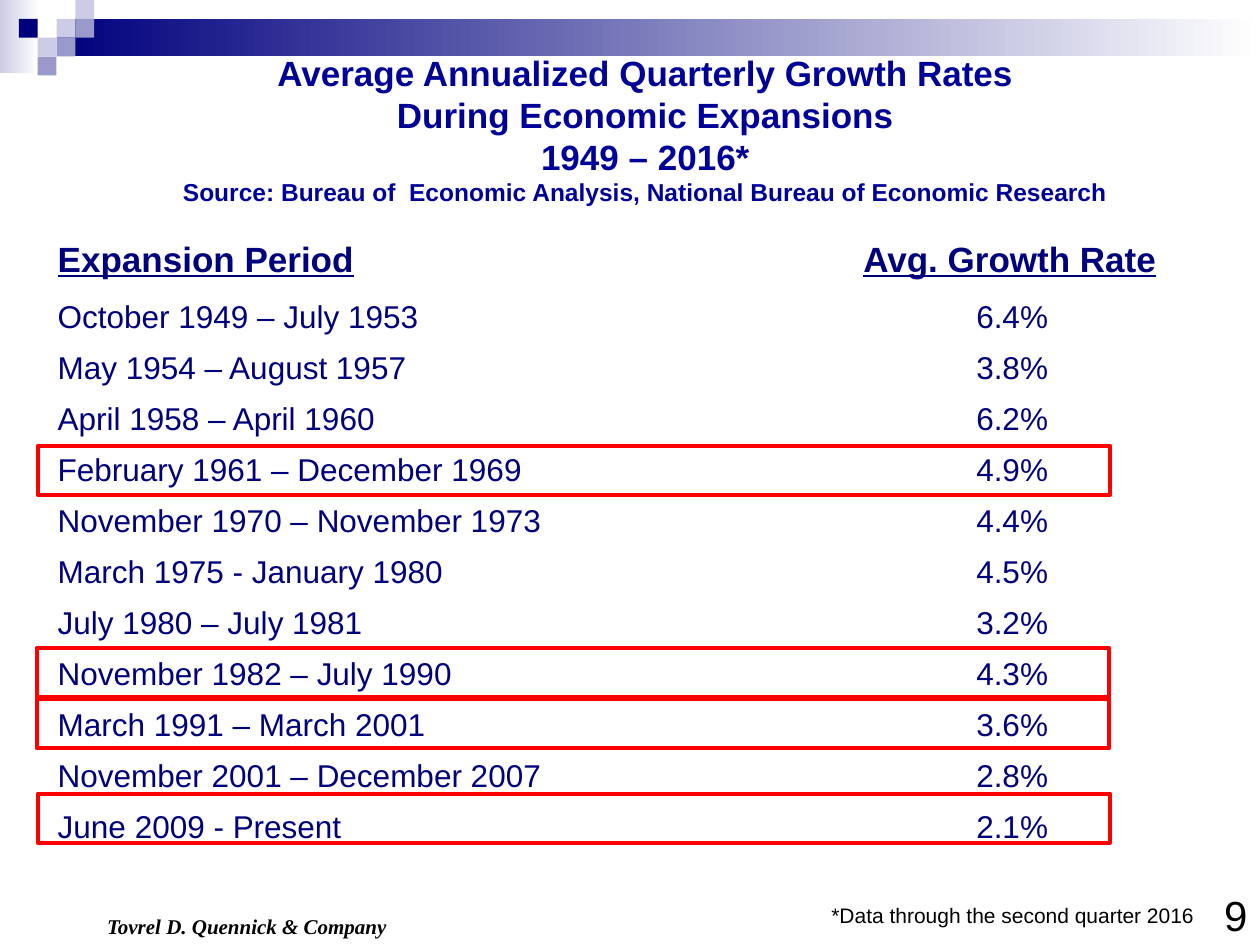
import pptx
import pptx.util
import pptx.dml.color
import pptx.enum.shapes
import pptx.enum.text
from pptx.util import Cm

ALIGN = pptx.enum.text.PP_ALIGN
RECTANGLE = pptx.enum.shapes.MSO_SHAPE.RECTANGLE
NAVY, LAVENDER, VIOLET, WHITE = "00007D", "CCCCE6", "9999CC", "FFFFFF"
TITLE_BLUE, BLACK, RED = "000099", "000000", "FF0000"


def colour(hex_string):
    return pptx.dml.color.RGBColor.from_string(hex_string)


def format_font(font, size, hex_string, **values):
    font.color.rgb = colour(hex_string)
    settings = {"name": "Arial", "size": pptx.util.Pt(size), **values}
    for name, value in settings.items():
        setattr(font, name, value)


presentation = pptx.Presentation()
presentation.slide_width = Cm(25.4)
presentation.slide_height = Cm(19.05)
slide = presentation.slides.add_slide(presentation.slide_layouts[5])

# Gradient bands along the top
bands = [
    (0, 0, 0.79, 1.47, LAVENDER),
    (1.14, 0.38, 24.26, 0.76, NAVY),
]
for left, top, width, height, start in bands:
    shape = slide.shapes.add_shape(RECTANGLE, Cm(left), Cm(top), Cm(width), Cm(height))
    shape.shadow.inherit = False
    shape.line.fill.background()
    shape.fill.gradient()
    shape.fill.gradient_angle = 0
    for stop, hex_string in zip(shape.fill.gradient_stops, (start, WHITE)):
        stop.color.rgb = colour(hex_string)

# Corner squares, as column and row on a square grid
SQUARE = 0.38
squares = [
    (3, 1, LAVENDER), (4, 0, LAVENDER), (4, 1, VIOLET), (2, 2, LAVENDER),
    (1, 1, NAVY), (3, 2, VIOLET), (2, 3, VIOLET),
]
for column, row, hex_string in squares:
    shape = slide.shapes.add_shape(
        RECTANGLE, Cm(column * SQUARE), Cm(row * SQUARE), Cm(SQUARE), Cm(SQUARE))
    shape.shadow.inherit = False
    shape.line.fill.background()
    shape.fill.solid()
    shape.fill.fore_color.rgb = colour(hex_string)

# Title with its source line
title = slide.shapes.title
placement = {"left": Cm(0.41), "top": Cm(1.32), "width": Cm(25.2), "height": Cm(2.97)}
for name, value in placement.items():
    setattr(title, name, value)
title.text_frame.auto_size = pptx.enum.text.MSO_AUTO_SIZE.NONE
title.text_frame.vertical_anchor = pptx.enum.text.MSO_ANCHOR.BOTTOM
paragraph = title.text_frame.paragraphs[0]
paragraph.alignment = ALIGN.CENTER
title_lines = [
    ("Average Annualized Quarterly Growth Rates", 20),
    ("During Economic Expansions", 20),
    ("1949 – 2016*", 20),
    ("Source: Bureau of  Economic Analysis, National Bureau of Economic Research", 14),
]
for index, (text, size) in enumerate(title_lines):
    if index:
        paragraph.add_line_break()
    run = paragraph.add_run()
    run.text = text
    format_font(run.font, size, TITLE_BLUE, bold=True)

# Table of expansions
rows = [
    ("Expansion Period", "Avg. Growth Rate"),
    ("October 1949 – July 1953", "6.4%"),
    ("May 1954 – August 1957", "3.8%"),
    ("April 1958 – April 1960", "6.2%"),
    ("February 1961 – December 1969", "4.9%"),
    ("November 1970 – November 1973", "4.4%"),
    ("March 1975 - January 1980", "4.5%"),
    ("July 1980 – July 1981", "3.2%"),
    ("November 1982 – July 1990", "4.3%"),
    ("March 1991 – March 2001", "3.6%"),
    ("November 2001 – December 2007", "2.8%"),
    ("June 2009 - Present", "2.1%"),
]
widths = [15.19, 5.28, 3.23]
table = slide.shapes.add_table(
    len(rows), len(widths), Cm(0.91), Cm(4.72), Cm(sum(widths)), Cm(12.37)).table
table.first_row = False
table.horz_banding = False
for column, width in zip(table.columns, widths):
    column.width = Cm(width)
for row_index, texts in enumerate(rows):
    header = row_index == 0
    table.rows[row_index].height = Cm(1.19 if header else 1.02)
    for cell in table.rows[row_index].cells:
        cell.fill.background()
    for column_index, text in enumerate(texts):
        paragraph = table.cell(row_index, column_index).text_frame.paragraphs[0]
        if column_index:
            paragraph.alignment = ALIGN.CENTER if header else ALIGN.RIGHT
        run = paragraph.add_run()
        run.text = text
        format_font(run.font, 20 if header else 18, NAVY, bold=header, underline=header)
table.cell(0, 1).merge(table.cell(0, 2))

# Footer, footnote and page number
notes = [
    ("Tovrel D. Quennick & Company", 1.91, 18.29, 6.9, 0.76, ALIGN.LEFT, 12,
     {"name": "Times New Roman", "bold": True, "italic": True}),
    ("*Data through the second quarter 2016", 16.51, 18.06, 7.87, 0.76, ALIGN.LEFT, 12, {}),
    ("9", 23.34, 17.81, 2.06, 1.27, ALIGN.RIGHT, 24, {}),
]
for text, left, top, width, height, alignment, size, values in notes:
    shape = slide.shapes.add_textbox(Cm(left), Cm(top), Cm(width), Cm(height))
    shape.text_frame.word_wrap = True
    paragraph = shape.text_frame.paragraphs[0]
    paragraph.alignment = alignment
    run = paragraph.add_run()
    run.text = text
    format_font(run.font, size, BLACK, **values)

# Red frames around the long expansions
for left, top in [(0.74, 14.1), (0.76, 16), (0.74, 13.06), (0.76, 8.99)]:
    shape = slide.shapes.add_shape(RECTANGLE, Cm(left), Cm(top), Cm(21.62), Cm(0.99))
    shape.shadow.inherit = False
    shape.fill.background()
    shape.line.color.rgb = colour(RED)
    shape.line.width = pptx.util.Pt(2.25)

presentation.save("out.pptx")
